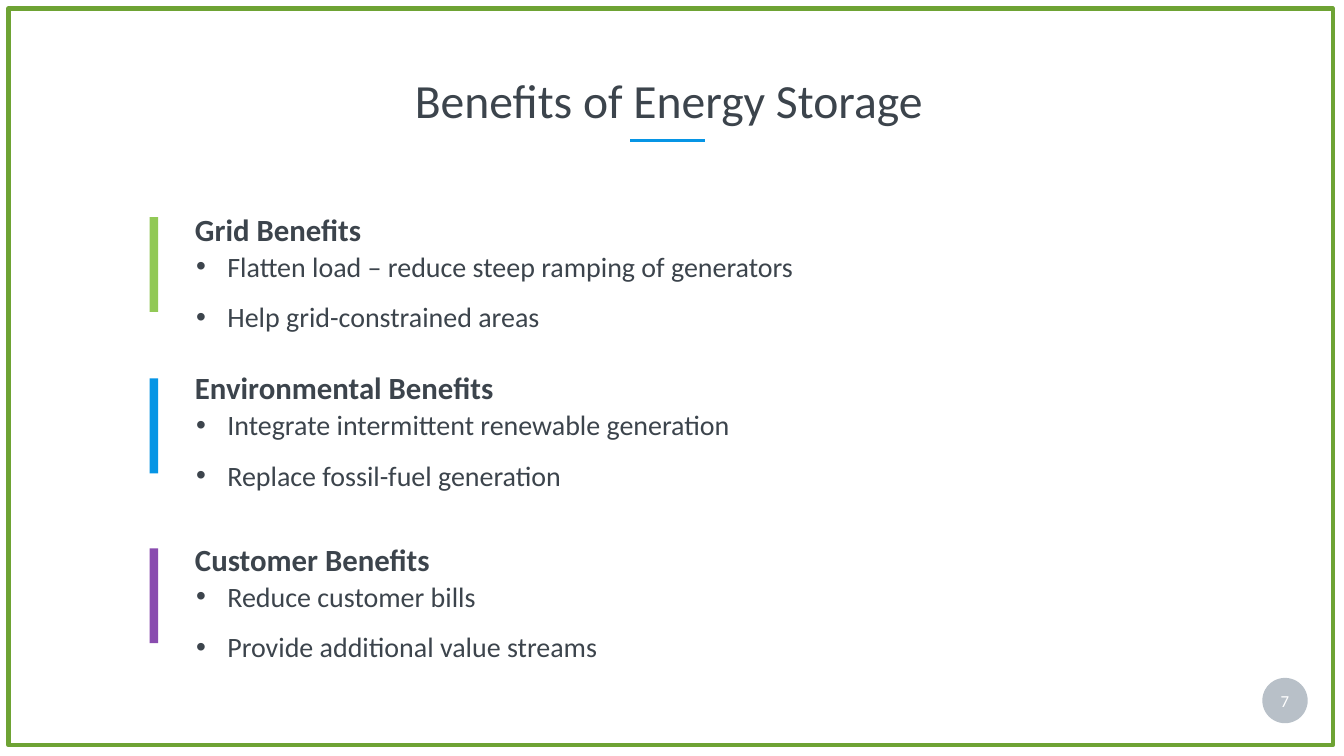
from lxml import etree
from pptx import Presentation
from pptx.dml.color import RGBColor
from pptx.enum import shapes, text
from pptx.oxml import ns
from pptx.util import Pt

FONT = "Calibri"
DARK = RGBColor(0x3C, 0x44, 0x4C)
WHITE = RGBColor(0xFF, 0xFF, 0xFF)
GREEN = RGBColor(0x92, 0xC9, 0x56)
BLUE = RGBColor(0x06, 0x95, 0xE5)
PURPLE = RGBColor(0x89, 0x4C, 0xAF)
FRAME_GREEN = RGBColor(0x6E, 0xA3, 0x34)
GREY = RGBColor(0xB8, 0xC0, 0xC8)

TITLE = "Benefits of Energy Storage"
PAGE_NUMBER = "7"
# heading, bullets, bar colour, heading top, bar top
SECTIONS = [
    ("Grid Benefits",
     ["Flatten load – reduce steep ramping of generators",
      "Help grid-constrained areas"], GREEN, 296.6, 310.3),
    ("Environmental Benefits",
     ["Integrate intermittent renewable generation",
      "Replace fossil-fuel generation"], BLUE, 523.4, 540.7),
    ("Customer Benefits",
     ["Reduce customer bills",
      "Provide additional value streams"], PURPLE, 768.2, 783.4),
]

BAR_LEFT, BAR_WIDTH, BAR_HEIGHT = 213.8, 12.2, 135.4
HEADING_LEFT, HEADING_WIDTH, HEADING_HEIGHT = 271.4, 452, 60.5
BODY_LEFT, BODY_WIDTH, BODY_HEIGHT = 262.8, 1440, 138.2
BODY_OFFSET = 50.7
BULLET_INDENT = 44.64


def box(left, top, width, height):
    return Pt(left), Pt(top), Pt(width), Pt(height)


def add_run(paragraph, words, size, color=DARK, bold=False):
    run = paragraph.add_run()
    run.text = words
    run.font.name = FONT
    run.font.size = Pt(size)
    run.font.bold = bold
    run.font.color.rgb = color


def add_filled(slide, kind, place, color):
    shape = slide.shapes.add_shape(kind, *box(*place))
    shape.shadow.inherit = False
    shape.fill.solid()
    shape.fill.fore_color.rgb = color
    shape.line.fill.background()
    return shape


def add_text_frame(slide, place, anchor):
    frame = slide.shapes.add_textbox(*box(*place)).text_frame
    frame.word_wrap = True
    frame.vertical_anchor = anchor
    return frame


def add_bullet(paragraph):
    """Give the paragraph a hanging bullet."""
    properties = paragraph._p.get_or_add_pPr()
    properties.set("marL", str(Pt(BULLET_INDENT)))
    properties.set("indent", str(-Pt(BULLET_INDENT)))
    etree.SubElement(properties, ns.qn("a:buFont")).set("typeface", "Arial")
    etree.SubElement(properties, ns.qn("a:buChar")).set("char", "•")


def add_title(slide):
    title = slide.shapes.title
    title.left, title.top, title.width, title.height = box(108, 59, 1694.9, 128.9)
    frame = title.text_frame
    frame.word_wrap = True
    frame.auto_size = text.MSO_AUTO_SIZE.NONE
    frame.vertical_anchor = text.MSO_ANCHOR.BOTTOM
    paragraph = frame.paragraphs[0]
    paragraph.alignment = text.PP_ALIGN.CENTER
    paragraph.line_spacing = 0.9
    paragraph.space_before = Pt(20)
    add_run(paragraph, TITLE, 68)

    underline = slide.shapes.add_connector(
        shapes.MSO_CONNECTOR.STRAIGHT, Pt(900), Pt(200.9), Pt(1007.3), Pt(200.9))
    underline.line.color.rgb = BLUE
    underline.line.width = Pt(3.6)
    etree.SubElement(underline._element.spPr, ns.qn("a:effectLst"))


def add_section(slide, heading, bullets, color, top, bar_top):
    frame = add_text_frame(
        slide, (HEADING_LEFT, top, HEADING_WIDTH, HEADING_HEIGHT), text.MSO_ANCHOR.MIDDLE)
    add_run(frame.paragraphs[0], heading, 44, bold=True)

    frame = add_text_frame(
        slide, (BODY_LEFT, top + BODY_OFFSET, BODY_WIDTH, BODY_HEIGHT), text.MSO_ANCHOR.TOP)
    frame.margin_left = frame.margin_right = Pt(17.28)
    frame.margin_top = frame.margin_bottom = Pt(8.64)
    for index, bullet in enumerate(bullets):
        paragraph = frame.add_paragraph() if index else frame.paragraphs[0]
        paragraph.space_before = Pt(24)
        add_bullet(paragraph)
        add_run(paragraph, bullet, 40)

    add_filled(slide, shapes.MSO_SHAPE.RECTANGLE,
               (BAR_LEFT, bar_top, BAR_WIDTH, BAR_HEIGHT), color)


def add_page_number(slide):
    circle = add_filled(slide, shapes.MSO_SHAPE.OVAL, (1802.9, 968.4, 64.8, 64.8), GREY)
    frame = circle.text_frame
    frame.margin_left = frame.margin_right = 0
    frame.vertical_anchor = text.MSO_ANCHOR.MIDDLE
    paragraph = frame.paragraphs[0]
    paragraph.alignment = text.PP_ALIGN.CENTER
    add_run(paragraph, PAGE_NUMBER, 24, WHITE)


def add_frame(slide):
    border = slide.shapes.add_shape(
        shapes.MSO_SHAPE.RECTANGLE, *box(12.2, 12.2, 1891.4, 1052.6))
    border.shadow.inherit = False
    border.fill.background()
    border.line.color.rgb = FRAME_GREEN
    border.line.width = Pt(6)


def main():
    presentation = Presentation()
    presentation.slide_width, presentation.slide_height = Pt(1919.52), Pt(1080)
    slide = presentation.slides.add_slide(presentation.slide_layouts.get_by_name("Title Only"))
    add_title(slide)
    for section in SECTIONS:
        add_section(slide, *section)
    add_page_number(slide)
    add_frame(slide)
    presentation.save("out.pptx")


if __name__ == "__main__":
    main()
